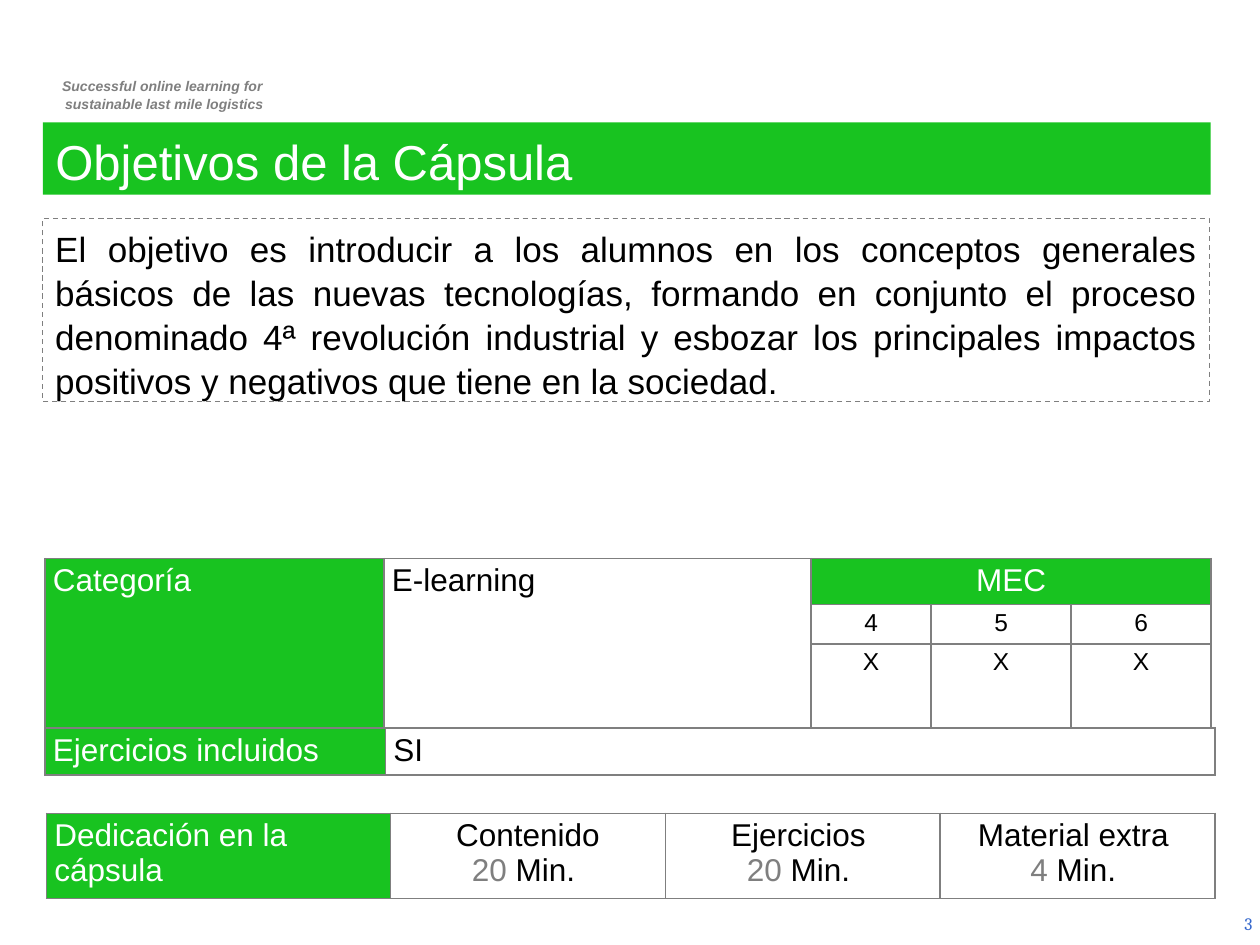
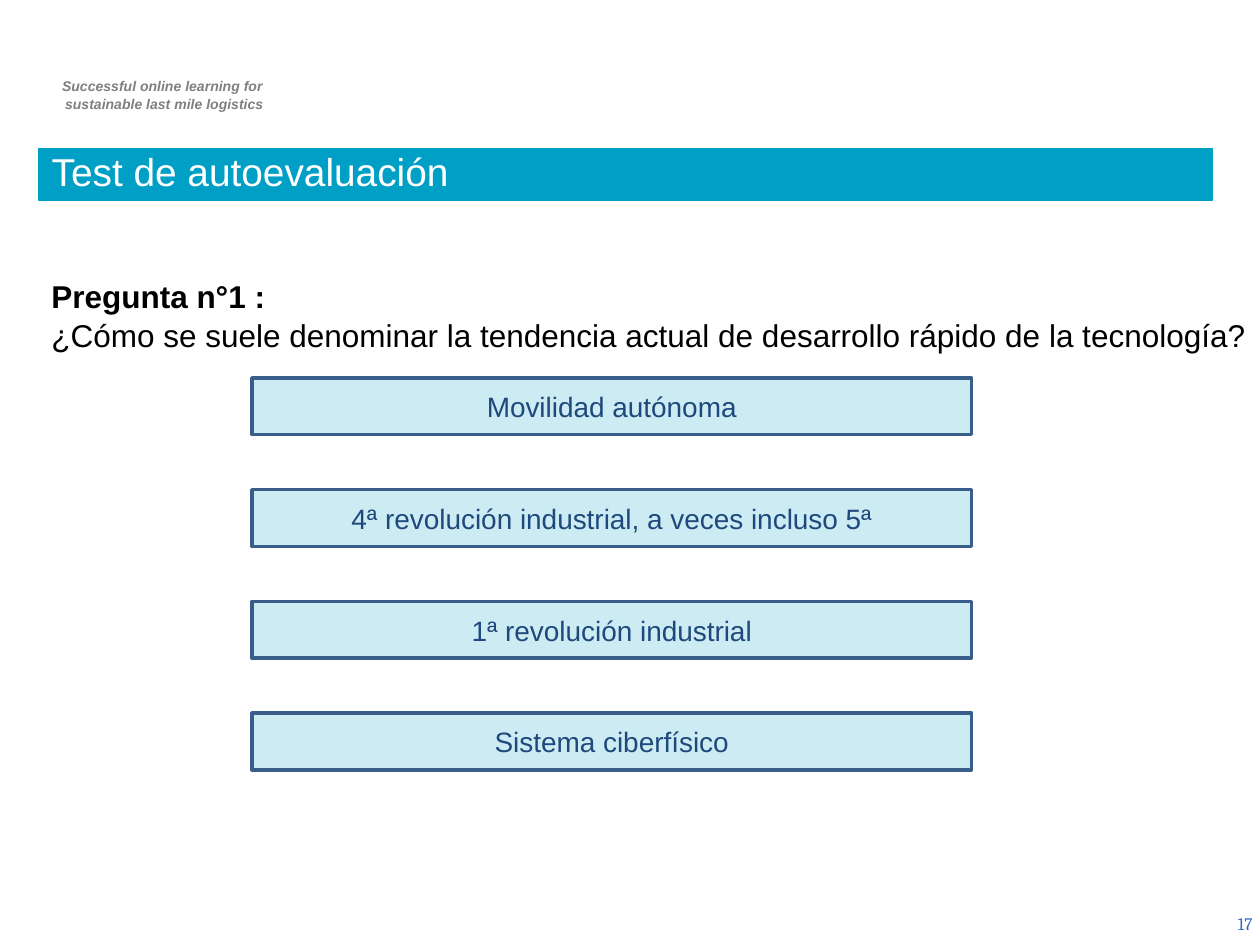
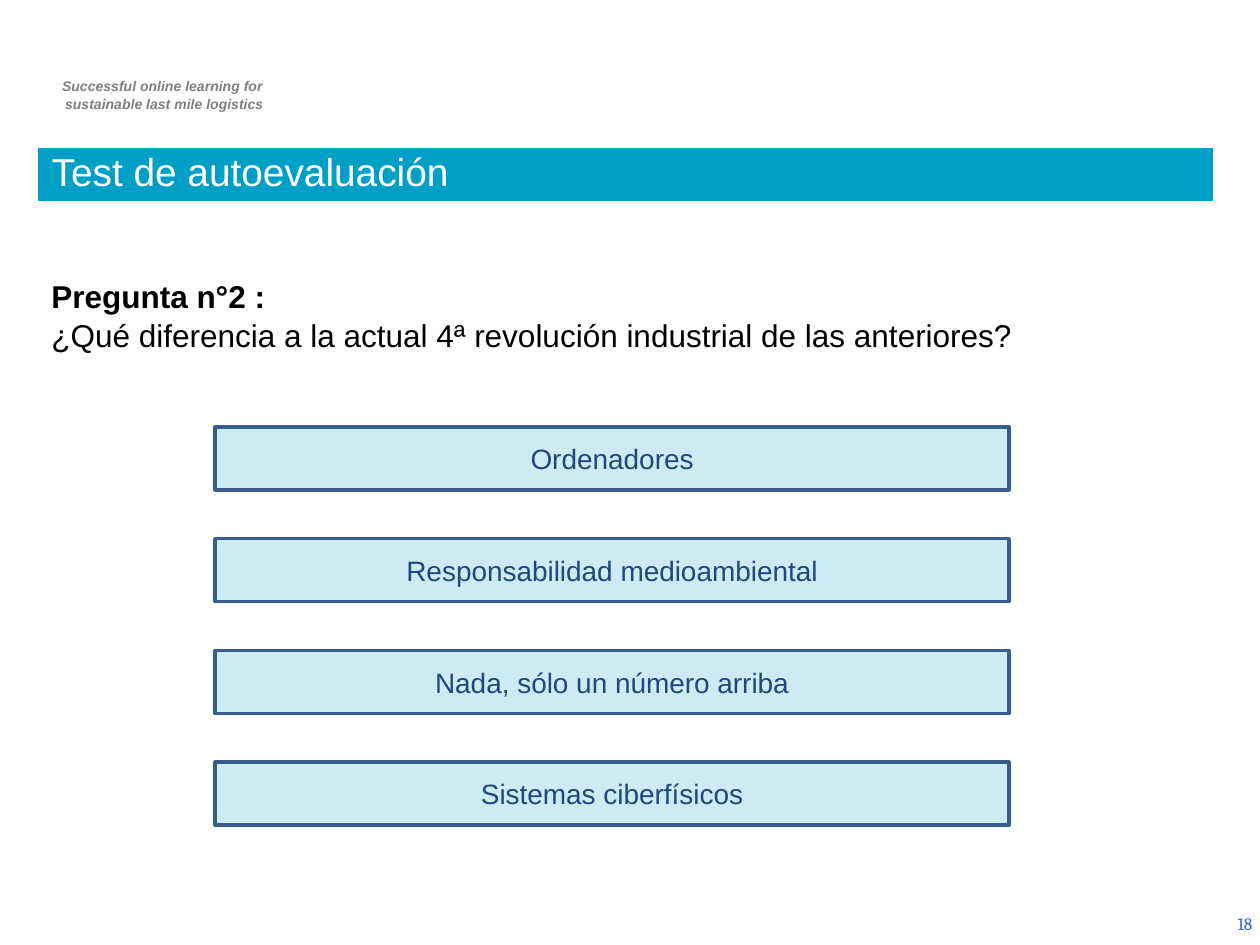
from lxml.etree import SubElement
from pptx import Presentation
from pptx.dml.color import RGBColor
from pptx.enum.dml import MSO_LINE
from pptx.enum.shapes import MSO_SHAPE
from pptx.enum.text import MSO_ANCHOR as ANCHOR, MSO_AUTO_SIZE, PP_ALIGN as ALIGN
from pptx.oxml.ns import qn
from pptx.util import Pt

COLORS = {
    "white": "FFFFFF",
    "black": "000000",
    "gray": "7F7F7F",
    "green": "18C320",
    "cyan": "009FC6",
    "navy": "1F497D",
    "outline": "395E89",
    "number": "3366CC",
}
OPTION_STEP = 63.85


def rgb(name):
    """Return the palette colour with the given name."""
    return RGBColor.from_string(COLORS[name])


class Deck:
    """Holds the deck style and the slide being built."""

    def __init__(self):
        """Start a 10 by 7.5 inch presentation."""
        self.presentation = Presentation()
        self.presentation.slide_width = Pt(720)
        self.presentation.slide_height = Pt(540)
        self.slide = None

    def new_slide(self, number):
        """Add a title-only slide with the tagline and the slide number."""
        self.slide = self.presentation.slides.add_slide(self.presentation.slide_layouts[5])
        tagline = [["Successful online learning for "], ["sustainable last mile logistics"]]
        self.text_box((20.9, 40.3, 146.2, 26.6), tagline, size=8, color="gray",
                      align=ALIGN.CENTER, bold=True, italic=True, spacing=1.05)
        self.text_box((555, 513.4, 167.8, 28.8), [[str(number)]], anchor=ANCHOR.MIDDLE,
                      size=10, color="number", align=ALIGN.RIGHT, font="Cambria")

    def add_text(self, frame, paragraphs, size=18, color="black", align=ALIGN.LEFT,
                 font="Arial", bold=False, italic=False, spacing=None):
        """Add paragraphs, each a list of strings or (string, overrides) runs."""
        for index, runs in enumerate(paragraphs):
            paragraph = frame.add_paragraph() if index else frame.paragraphs[0]
            paragraph.alignment = align
            if spacing:
                paragraph.line_spacing = spacing
            for item in runs:
                text, changes = (item, {}) if isinstance(item, str) else item
                run = paragraph.add_run()
                run.text = text
                run.font.name = font
                run.font.size = Pt(size)
                run.font.bold = changes.get("bold", bold)
                run.font.italic = italic
                run.font.color.rgb = rgb(changes.get("color", color))

    def fill_frame(self, shape, paragraphs, anchor=ANCHOR.TOP, **style):
        """Set up the text frame of a shape and put text into it."""
        frame = shape.text_frame
        frame.word_wrap = True
        frame.auto_size = MSO_AUTO_SIZE.NONE
        frame.vertical_anchor = anchor
        frame.margin_left = frame.margin_right = Pt(7.2)
        frame.margin_top = frame.margin_bottom = Pt(3.6)
        self.add_text(frame, paragraphs, **style)

    def text_box(self, box, paragraphs, **style):
        """Add a plain text box."""
        shape = self.slide.shapes.add_textbox(*map(Pt, box))
        self.fill_frame(shape, paragraphs, **style)

    def title(self, text, box, color, **style):
        """Turn the title placeholder into a coloured band."""
        shape = self.slide.shapes.title
        shape.left, shape.top, shape.width, shape.height = map(Pt, box)
        shape.fill.solid()
        shape.fill.fore_color.rgb = rgb(color)
        self.fill_frame(shape, [[text]], color="white", **style)
        return shape

    def rectangle(self, box, paragraphs, line, width, fill=None, opacity=100, dash=None, **style):
        """Add an outlined rectangle with text and an optional translucent fill."""
        shape = self.slide.shapes.add_shape(MSO_SHAPE.RECTANGLE, *map(Pt, box))
        shape.shadow.inherit = False
        shape.line.color.rgb = rgb(line)
        shape.line.width = Pt(width)
        if dash:
            shape.line.dash_style = dash
        if fill:
            shape.fill.solid()
            shape.fill.fore_color.rgb = rgb(fill)
            solid = shape.element.spPr.find(qn("a:solidFill"))
            SubElement(solid[0], qn("a:alpha"), val=str(opacity * 1000))
        else:
            shape.fill.background()
        self.fill_frame(shape, paragraphs, **style)

    def border(self, cell):
        """Draw a thin gray line on all four sides of a cell."""
        properties = cell._tc.get_or_add_tcPr()
        for side in ("a:lnL", "a:lnR", "a:lnT", "a:lnB"):
            line = SubElement(properties, qn(side), w=str(Pt(1)))
            solid = SubElement(line, qn("a:solidFill"))
            SubElement(solid, qn("a:srgbClr"), val=COLORS["gray"])

    def table(self, left, top, columns, rows, cells, headers, merges=()):
        """Add a bordered table; cells maps (row, column) to paragraphs and style."""
        frame = self.slide.shapes.add_table(len(rows), len(columns), Pt(left), Pt(top),
                                            Pt(sum(columns)), Pt(sum(rows)))
        table = frame.table
        table.first_row = table.horz_banding = False
        for column, width in zip(table.columns, columns):
            column.width = Pt(width)
        for row, height in zip(table.rows, rows):
            row.height = Pt(height)
        for start, end in merges:
            table.cell(*start).merge(table.cell(*end))
        for row in range(len(rows)):
            for column in range(len(columns)):
                cell = table.cell(row, column)
                cell.margin_left = cell.margin_right = Pt(4.5)
                cell.margin_top = cell.margin_bottom = Pt(2.7)
                self.border(cell)
                is_header = (row, column) in headers
                if is_header:
                    cell.fill.solid()
                    cell.fill.fore_color.rgb = rgb("green")
                else:
                    cell.fill.background()
                if (row, column) in cells:
                    paragraphs, style = cells[row, column]
                    self.add_text(cell.text_frame, paragraphs,
                                  color="white" if is_header else "black", **style)

    def question(self, number, text, options, box, text_width):
        """Add a self-assessment question with its stack of answer options."""
        band = self.title("Test de autoevaluación", (22.3, 85, 670.3, 29.5), "cyan",
                          size=22.2, anchor=ANCHOR.BOTTOM, spacing=0.8)
        band.line.color.rgb = rgb("cyan")
        band.line.width = Pt(0.75)
        self.text_box((22.3, 153.4, text_width, 51.1),
                      [[(f"Pregunta n°{number} :", {"bold": True})], [text]], spacing=1.05)
        left, top, width, height = box
        for index, option in enumerate(options):
            self.rectangle((left, top + index * OPTION_STEP, width, height), [[option]],
                           "outline", 2, fill="cyan", opacity=20, anchor=ANCHOR.MIDDLE,
                           size=16, color="navy", align=ALIGN.CENTER)


def build_objectives(deck):
    """Build the slide with the objectives and the data of the capsule."""
    deck.new_slide(3)
    deck.title("Objetivos de la Cápsula", (24.5, 70, 667.4, 41.2), "green", size=28, spacing=1.05)
    objective = (
        "El objetivo es introducir a los alumnos en los conceptos generales básicos de las "
        "nuevas tecnologías, formando en conjunto el proceso denominado 4ª revolución "
        "industrial y esbozar los principales impactos positivos y negativos que tiene en "
        "la sociedad."
    )
    deck.rectangle((24.5, 125, 666.7, 104.4), [[objective]], "gray", 0.75,
                   dash=MSO_LINE.DASH, size=20, align=ALIGN.JUSTIFY, spacing=1.05)

    centered = {"align": ALIGN.CENTER}
    small = {"align": ALIGN.CENTER, "size": 14}
    category = {
        (0, 0): ([["Categoría"]], {}),
        (0, 1): ([["E-learning"]], {}),
        (0, 2): ([["MEC"]], centered),
    }
    for column, level in enumerate("456", start=2):
        category[1, column] = ([[level]], small)
        category[2, column] = ([["X"]], small)
    deck.table(25.7, 319.2, (193.8, 244, 68.6, 80, 80), (26.3, 22.5, 48.3), category,
               headers={(0, 0), (0, 2)},
               merges=[((0, 0), (2, 0)), ((0, 1), (2, 1)), ((0, 2), (0, 4))])

    exercises = {(0, 0): ([["Ejercicios incluidos"]], {}), (0, 1): ([["SI"]], {})}
    deck.table(25.7, 416, (194.6, 474), (26.8,), exercises, headers={(0, 0)})

    dedication = {(0, 0): ([["Dedicación en la cápsula"]], {})}
    activities = [("Contenido", 20), ("Ejercicios ", 20), ("Material extra ", 4)]
    for column, (activity, minutes) in enumerate(activities, start=1):
        duration = [(f"{minutes} ", {"color": "gray"}), "Min. "]
        dedication[0, column] = ([[activity], duration], centered)
    deck.table(26.6, 464.8, (196.5, 157.1, 157.1, 157.1), (48.7,), dedication, headers={(0, 0)})


def main():
    """Build and save the deck."""
    deck = Deck()
    build_objectives(deck)
    deck.new_slide(17)
    deck.question(
        1, "¿Cómo se suele denominar la tendencia actual de desarrollo rápido de la tecnología?",
        ["Movilidad autónoma", "4ª revolución industrial, a veces incluso 5ª",
         "1ª revolución industrial", "Sistema ciberfísico"],
        (144, 216, 411.2, 32.4), 697.7)
    deck.new_slide(18)
    deck.question(
        2, "¿Qué diferencia a la actual 4ª revolución industrial de las anteriores?",
        ["Ordenadores", "Responsabilidad medioambiental",
         "Nada, sólo un número arriba", "Sistemas ciberfísicos"],
        (123, 244, 453.6, 36), 670.3)
    deck.presentation.save("out.pptx")


if __name__ == "__main__":
    main()
